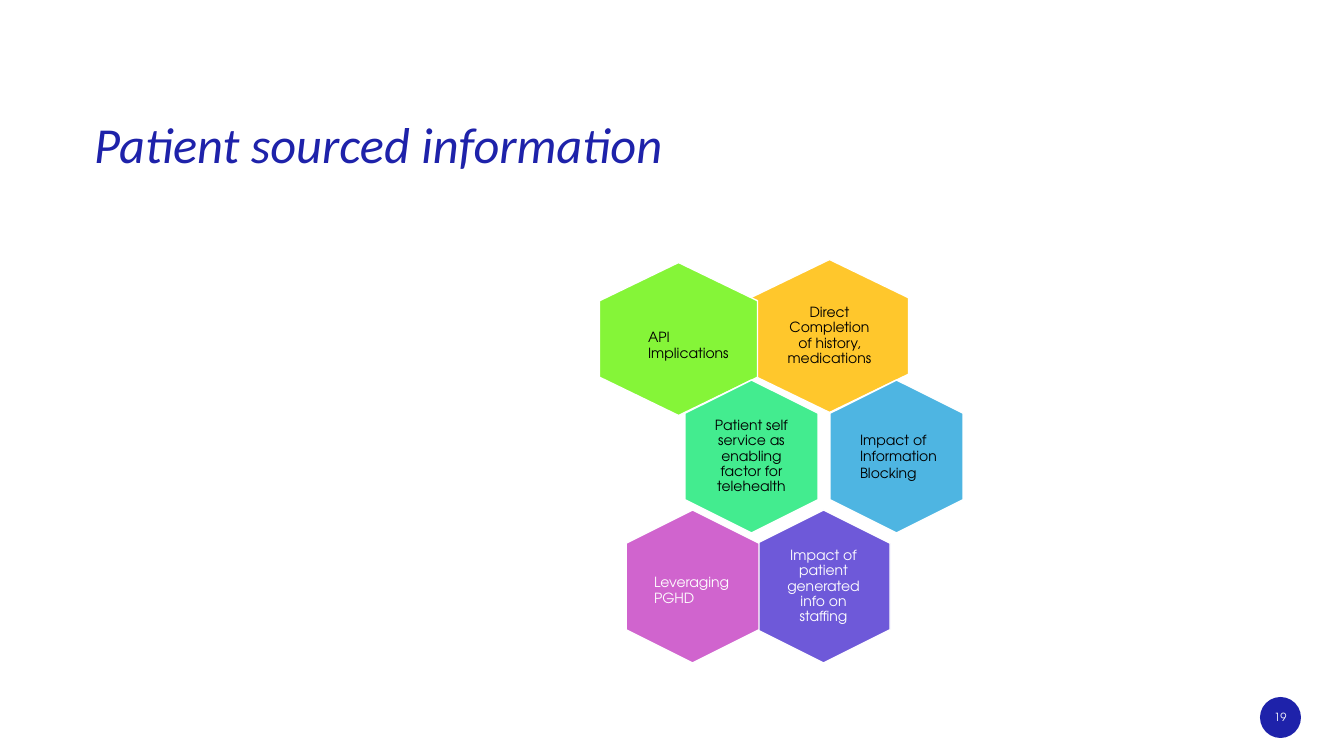
from dataclasses import dataclass

from pptx import Presentation
from pptx.dml.color import RGBColor
from pptx.enum.shapes import MSO_SHAPE
from pptx.enum.text import MSO_ANCHOR, MSO_AUTO_SIZE, PP_ALIGN
from pptx.util import Emu, Pt

EMU_PER_PX = 12192000 / 1344


@dataclass(frozen=True)
class Theme:
    navy: str = "1E22AA"
    white: str = "FFFFFF"
    black: str = "000000"
    yellow: str = "FFC72C"
    lime: str = "85F538"
    mint: str = "43EC8F"
    sky: str = "4EB5E2"
    violet: str = "6E59D9"
    orchid: str = "D064CE"
    title_font: str = "Calibri"
    body_font: str = "TeX Gyre Adventor"
    title_size: int = 36
    label_size: int = 10
    number_size: int = 8


theme = Theme()


def px(*lengths):
    return [Emu(round(length * EMU_PER_PX)) for length in lengths]


def add_text(box, text, font_name, size, color, inset_x=0, inset_y=0):
    """Add a wrapped, top-left text box and return its frame and paragraph."""
    text_frame = slide.shapes.add_textbox(*px(*box)).text_frame
    text_frame.word_wrap = True
    text_frame.margin_left, text_frame.margin_right = px(inset_x, inset_x)
    text_frame.margin_top, text_frame.margin_bottom = px(inset_y, inset_y)
    text_frame.text = text
    paragraph = text_frame.paragraphs[0]
    font = paragraph.runs[0].font
    font.name, font.size = font_name, Pt(size)
    font.color.rgb = RGBColor.from_string(color)
    return text_frame, paragraph


presentation = Presentation()
presentation.slide_width, presentation.slide_height = px(1344, 756)
slide = presentation.slides.add_slide(presentation.slide_layouts[6])

# Title
_, title = add_text((94, 127, 1084, 113), "Patient sourced information",
                    theme.title_font, theme.title_size, theme.navy)
title.line_spacing = 0.75
title.runs[0].font.italic = True

# Page number
badge = slide.shapes.add_shape(MSO_SHAPE.OVAL, *px(1260, 697, 41, 41))
badge.shadow.inherit = False
badge.fill.solid()
badge.fill.fore_color.rgb = RGBColor.from_string(theme.navy)
badge.line.fill.background()
number_frame, number = add_text((1252, 705, 57, 25), "19", theme.body_font,
                                theme.number_size, theme.white)
number_frame.vertical_anchor = MSO_ANCHOR.MIDDLE
number.alignment = PP_ALIGN.CENTER

# Hexagons: left, top and height before the quarter turn, then the fill
HEXAGON_WIDTH = 153
hexagons = {
    "history": (753, 257, 158, theme.yellow),
    "api": (602, 260, 158, theme.lime),
    "self service": (675, 390, 133, theme.mint),
    "blocking": (820, 390, 133, theme.sky),
    "staffing": (747, 520, 133, theme.violet),
    "leveraging": (616, 520, 133, theme.orchid),
}
for left, top, height, fill in hexagons.values():
    hexagon = slide.shapes.add_shape(MSO_SHAPE.HEXAGON,
                                     *px(left, top, HEXAGON_WIDTH, height))
    hexagon.rotation = 90
    hexagon.adjustments[0] = 0.25
    hexagon.shadow.inherit = False
    hexagon.fill.solid()
    hexagon.fill.fore_color.rgb = RGBColor.from_string(fill)
    hexagon.line.color.rgb = RGBColor.from_string(theme.white)
    hexagon.line.width = Pt(1)

# Labels centred on their hexagon
centred_labels = [
    ("history", 105, 102, "Direct Completion of history, medications", theme.black),
    ("self service", 92, 106,
     "Patient self service as enabling factor for telehealth", theme.black),
    ("staffing", 92, 106, "Impact of patient generated info on staffing", theme.white),
]
for name, width, height, text, color in centred_labels:
    left, top, hexagon_height, _ = hexagons[name]
    box = (left + (HEXAGON_WIDTH - width) / 2,
           top + (hexagon_height - height) / 2, width, height)
    label_frame, label = add_text(box, text, theme.body_font,
                                  theme.label_size, color, 4, 4)
    label_frame.vertical_anchor = MSO_ANCHOR.MIDDLE
    label.alignment = PP_ALIGN.CENTER
    label.line_spacing = 0.9

# Left-aligned labels
left_labels = [
    ((644, 568, 103, 44), "Leveraging PGHD", theme.white),
    ((850, 426, 99, 61), "Impact of Information Blocking", theme.black),
    ((638, 323, 116, 44), "API Implications", theme.black),
]
for box, text, color in left_labels:
    label_frame, _ = add_text(box, text, theme.body_font,
                              theme.label_size, color, 10, 5)
    label_frame.auto_size = MSO_AUTO_SIZE.SHAPE_TO_FIT_TEXT

presentation.save("out.pptx")
